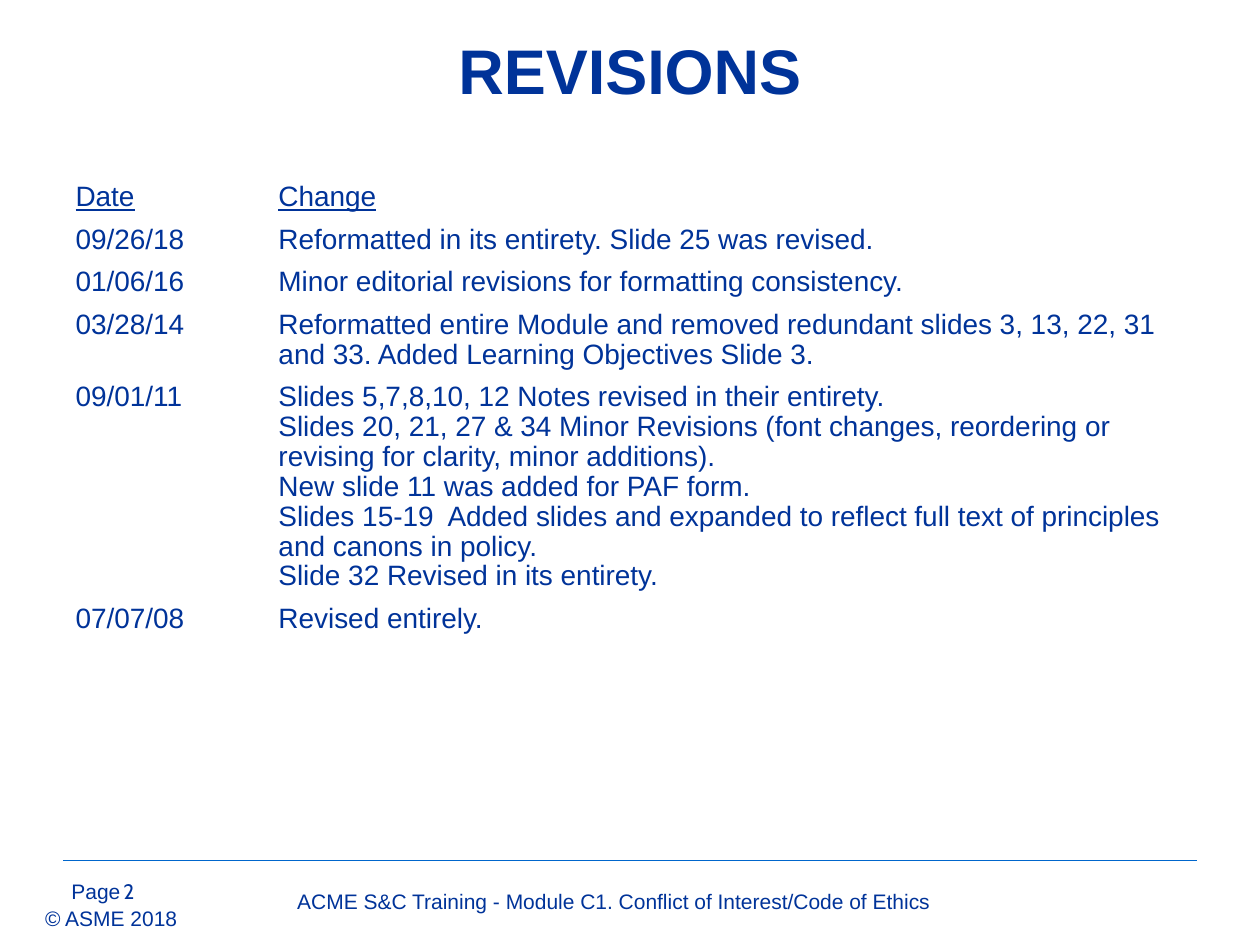
from dataclasses import dataclass

from lxml.etree import SubElement
from pptx import Presentation
from pptx.dml.color import RGBColor as RGB
from pptx.enum.shapes import MSO_CONNECTOR as CONN
from pptx.enum.text import MSO_ANCHOR as ANCHOR, PP_ALIGN as ALIGN
from pptx.oxml.ns import qn
from pptx.util import Cm, Pt


@dataclass(frozen=True)
class Theme:
    ink: RGB = RGB(0x00, 0x33, 0x99)
    rule: RGB = RGB(0x00, 0x66, 0xCC)
    paper: RGB = RGB(0xFF, 0xFF, 0xFF)
    font: str = "Arial"
    number_font: str = "Cabin"
    title: int = 36
    body: int = 16
    footer: int = 12
    line_spacing: float = 0.96


T = Theme()
REVISIONS = [
    ("Date", ["Change"]),
    ("09/26/18", ["Reformatted in its entirety. Slide 25 was revised."]),
    ("01/06/16", ["Minor editorial revisions for formatting consistency."]),
    ("03/28/14", ["Reformatted entire Module and removed redundant slides "
                  "3, 13, 22, 31 and 33. Added Learning Objectives Slide 3."]),
    ("09/01/11", [
        "Slides 5,7,8,10, 12 Notes revised in their entirety.",
        "Slides 20, 21, 27 & 34 Minor Revisions (font changes, reordering or "
        "revising for clarity, minor additions).",
        "New slide 11 was added for PAF form.",
        "Slides 15-19  Added slides and expanded to reflect full text of "
        "principles and canons in policy.",
        "Slide 32 Revised in its entirety.",
    ]),
    ("07/07/08", ["Revised entirely."]),
]
ROW_HEIGHTS = [0.81, 0.81, 0.81, 1.4, 4.32, 2.03]


def write(tf, lines, size, align=ALIGN.LEFT, spacing=None, **extra):
    fmt = {"name": T.font, "size": Pt(size), "bold": False, **extra}
    for i, line in enumerate(lines):
        p = tf.add_paragraph() if i else tf.paragraphs[0]
        p.alignment = align
        p.line_spacing = spacing
        r = p.add_run()
        r.text = line
        for key, value in fmt.items():
            setattr(r.font, key, value)
        r.font.color.rgb = T.ink


def place(sp, x, y, w, h):
    for key, value in zip(("left", "top", "width", "height"), (x, y, w, h)):
        setattr(sp, key, Cm(value))


def add_title(s, x, y, w, h):
    sp = s.shapes.title
    place(sp, x, y, w, h)
    sp.text_frame.vertical_anchor = ANCHOR.MIDDLE
    write(sp.text_frame, ["REVISIONS"], T.title, ALIGN.CENTER, bold=True)


def add_revisions(s, x, y, w, h):
    date_w = 4.09
    tbl = s.shapes.add_table(len(REVISIONS), 2, Cm(x), Cm(y), Cm(w), Cm(h)).table
    tbl.first_row = tbl.horz_banding = False
    for col, width in zip(tbl.columns, (date_w, w - date_w)):
        col.width = Cm(width)
    for i, (date, changes) in enumerate(REVISIONS):
        tbl.rows[i].height = Cm(ROW_HEIGHTS[i])
        for j, lines in enumerate(([date], changes)):
            cell = tbl.cell(i, j)
            cell.fill.solid()
            cell.fill.fore_color.rgb = T.paper
            write(cell.text_frame, lines, T.body, spacing=T.line_spacing,
                  underline=i == 0)


def add_label(s, text, x, y, w, h, align=ALIGN.LEFT, inset=True, **extra):
    tf = s.shapes.add_textbox(Cm(x), Cm(y), Cm(w), Cm(h)).text_frame
    tf.word_wrap = inset
    if not inset:
        for side in ("left", "top", "right", "bottom"):
            setattr(tf, f"margin_{side}", 0)
    write(tf, [text], T.footer, align, **extra)


def add_footer(s, x, y, w):
    line = s.shapes.add_connector(CONN.STRAIGHT, Cm(x), Cm(y), Cm(x + w), Cm(y))
    line.line.color.rgb = T.rule
    line.line.width = Pt(0.75)
    SubElement(line._element.spPr, qn("a:effectLst"))
    add_label(s, "Page", x - 0.08, y + 0.23, 1.96, 0.66)
    add_label(s, "© ASME 2018", x - 0.36, y + 0.91, 2.69, 0.51, inset=False)
    add_label(s, "2", x + 0.97, y + 0.23, 1.19, 0.58, name=T.number_font)
    add_label(s, "ACME S&C Training - Module C1. Conflict of Interest/Code of Ethics",
              x + 2.64, y + 0.43, 16.94, 0.66, ALIGN.CENTER)


def main():
    prs = Presentation()
    prs.slide_width, prs.slide_height = Cm(25.4), Cm(19.05)
    s = prs.slides.add_slide(prs.slide_layouts[5])
    s.background.fill.solid()
    s.background.fill.fore_color.rgb = T.paper
    add_title(s, 2.54, 0.76, 20.32, 1.27)
    add_revisions(s, 1.27, 3.56, 22.86, 11.43)
    add_footer(s, 1.27, 17.35, 22.86)
    prs.save("out.pptx")


if __name__ == "__main__":
    main()
